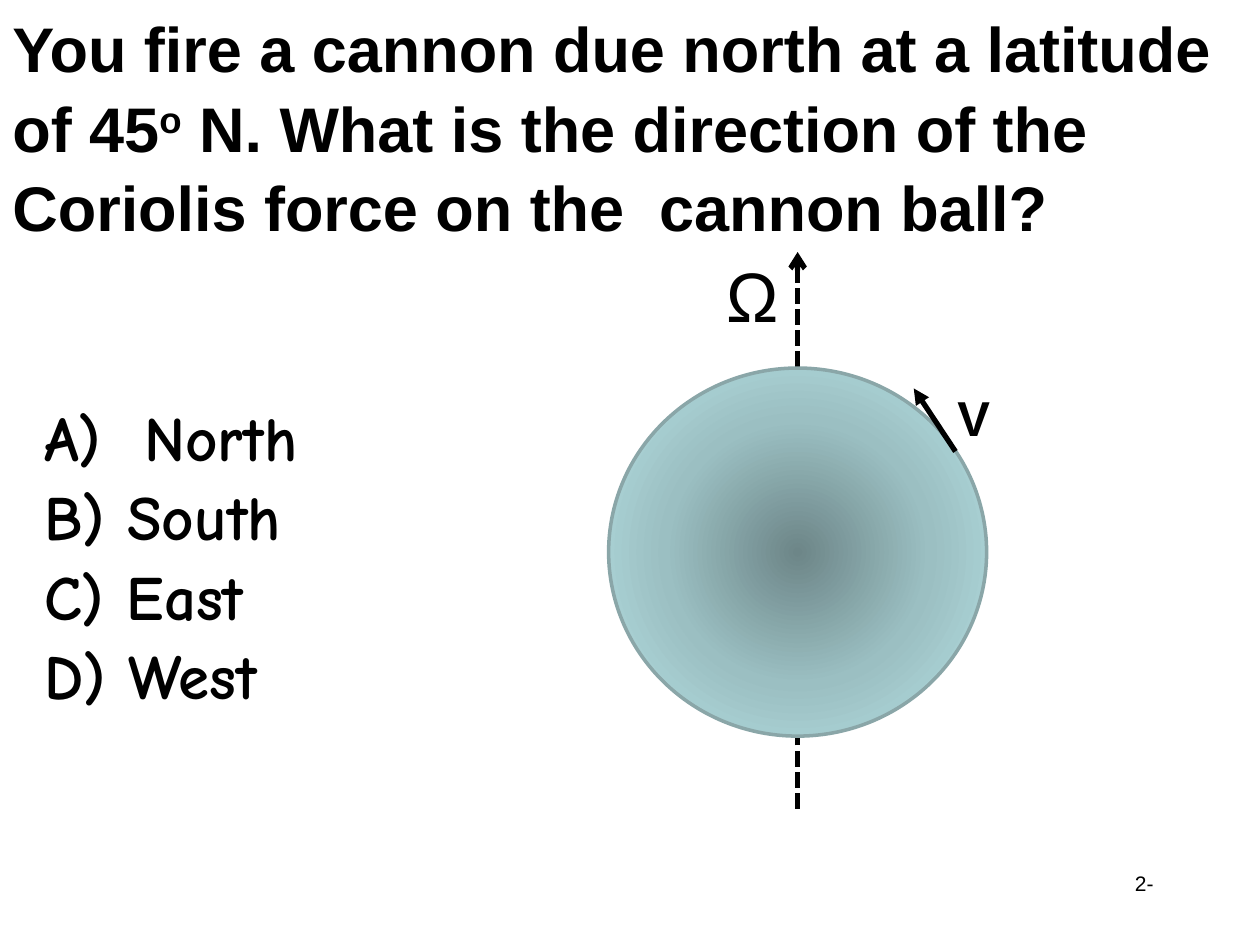
from lxml import etree
from pptx import Presentation
from pptx import util as u
from pptx.dml.color import RGBColor
from pptx.enum import dml, shapes, text
from pptx.oxml.ns import qn

BLACK = "000000"


def color(hex_value):
    """Turn a hex string into a colour."""
    return RGBColor.from_string(hex_value)


def add_run(paragraph, content, size, font, bold, raised=False):
    """Add one formatted run, raised as a superscript if asked."""
    run = paragraph.add_run()
    run.text = content
    run.font.size = u.Pt(size)
    run.font.name = font
    run.font.bold = bold
    run.font.color.rgb = color(BLACK)
    if raised:
        run.font._element.set("baseline", "30000")


def add_text(slide, box, paragraphs, size, font="Arial", bold=False):
    """Add a text box from paragraphs, each a list of (content, raised) runs."""
    shape = slide.shapes.add_textbox(*(u.Cm(length) for length in box))
    frame = shape.text_frame
    frame.word_wrap = True
    frame.auto_size = text.MSO_AUTO_SIZE.SHAPE_TO_FIT_TEXT
    for index, runs in enumerate(paragraphs):
        paragraph = frame.paragraphs[0] if index == 0 else frame.add_paragraph()
        paragraph.line_spacing = 1.05
        for content, raised in runs:
            add_run(paragraph, content, size, font, bold, raised)
    return frame


def set_tab(paragraph, position):
    """Give a paragraph one left tab stop."""
    tabs = etree.SubElement(paragraph._p.get_or_add_pPr(), qn("a:tabLst"))
    etree.SubElement(tabs, qn("a:tab"), pos=str(u.Cm(position)), algn="l")


def add_arrow(slide, start, end, head, dash=None):
    """Add a black line with an arrowhead at its end."""
    points = [u.Cm(length) for length in (*start, *end)]
    arrow = slide.shapes.add_connector(shapes.MSO_CONNECTOR.STRAIGHT, *points)
    arrow.line.color.rgb = color(BLACK)
    arrow.line.width = u.Pt(3)
    if dash:
        arrow.line.dash_style = dash
    etree.SubElement(arrow.line._get_or_add_ln(), qn("a:tailEnd"), type=head)
    etree.SubElement(arrow._element.spPr, qn("a:effectLst"))


def add_globe(slide, box, stops):
    """Add an ellipse with a gradient that spreads from its centre."""
    globe = slide.shapes.add_shape(
        shapes.MSO_SHAPE.OVAL, *(u.Cm(length) for length in box))
    globe.shadow.inherit = False
    globe.line.color.rgb = color("8AA6A8")
    globe.line.width = u.Pt(2)
    gradient = etree.Element(qn("a:gradFill"), rotWithShape="1")
    stop_list = etree.SubElement(gradient, qn("a:gsLst"))
    for percent, hex_value in stops:
        stop = etree.SubElement(stop_list, qn("a:gs"), pos=str(percent * 1000))
        etree.SubElement(stop, qn("a:srgbClr"), val=hex_value)
    spread = etree.SubElement(gradient, qn("a:path"), path="circle")
    etree.SubElement(spread, qn("a:fillToRect"),
                     {side: "50000" for side in "ltrb"})
    globe._element.spPr.find(qn("a:prstGeom")).addnext(gradient)


def main():
    """Build the Coriolis question slide."""
    presentation = Presentation()
    presentation.slide_width = u.Cm(25.4)
    presentation.slide_height = u.Cm(19.05)
    slide = presentation.slides.add_slide(presentation.slide_layouts[6])

    add_text(slide, (22.63, 17.4, 1.22, 0.76), [[("2-", False)]], 12)
    question = [
        ("You fire a cannon due north at a latitude of 45", False),
        ("o", True),
        (" N. What is the direction of the Coriolis force on the  cannon ball?",
         False),
    ]
    add_text(slide, (0, 0, 24.97, 4.88), [question], 36, bold=True)

    add_arrow(slide, (16.08, 16.3), (16.08, 5.08), "arrow",
              dml.MSO_LINE.SQUARE_DOT)
    add_globe(slide, (12.27, 7.42, 7.62, 7.42),
              [(0, "6D8688"), (50, "9BBFC2"), (100, "B8E3E6")])
    add_arrow(slide, (19.26, 9.1), (18.42, 7.83), "triangle")
    add_text(slide, (19.05, 7.62, 1.9, 1.45), [[("V", False)]], 28, bold=True)
    add_text(slide, (14.4, 4.88, 2.54, 1.96), [[("Ω", False)]], 40)

    answers = ["A)\tNorth", "B) South", "C) East", "D) West"]
    frame = add_text(slide, (0.64, 7.83, 12.7, 6.4),
                     [[(answer, False)] for answer in answers],
                     36, "Comic Neue", True)
    set_tab(frame.paragraphs[0], 2.02)

    presentation.save("out.pptx")


if __name__ == "__main__":
    main()
